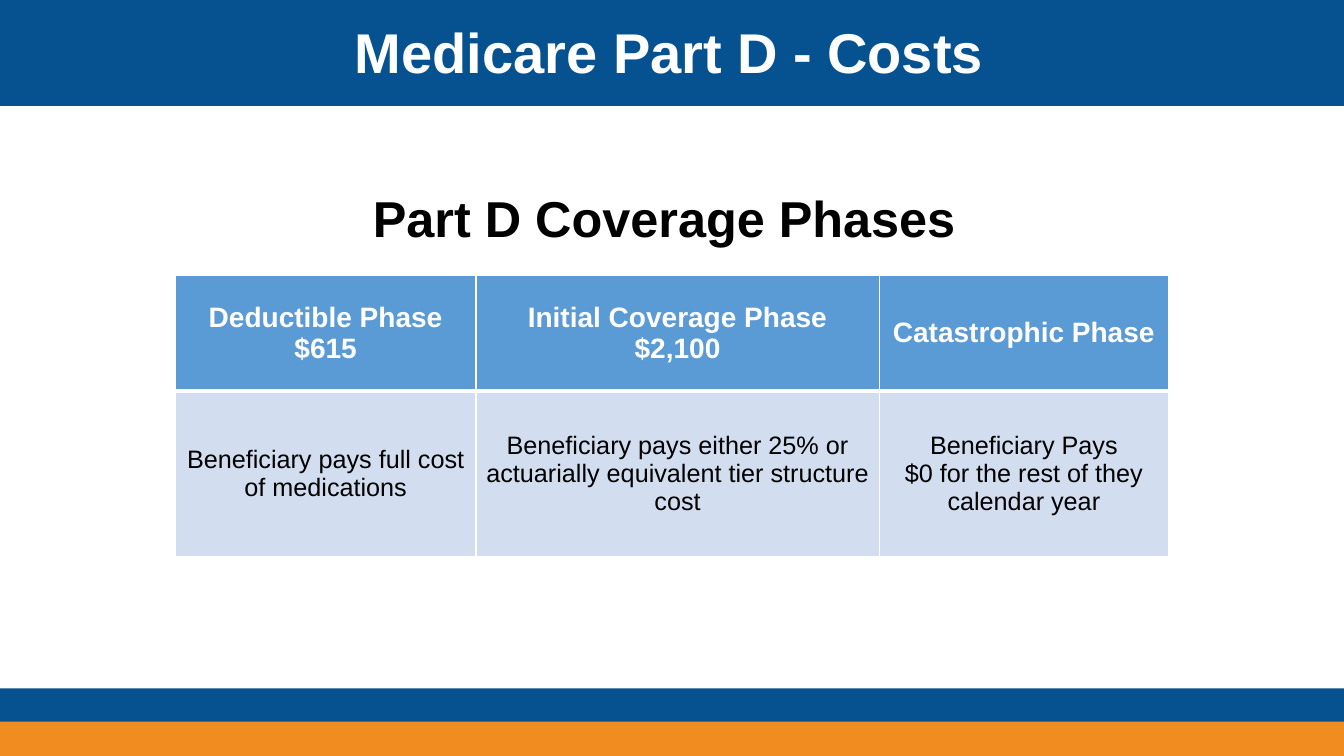
from dataclasses import dataclass

from lxml import etree
from pptx import Presentation
from pptx import util as u
from pptx.dml.color import RGBColor
from pptx.enum import shapes, text
from pptx.oxml import ns

PX = 9144  # EMU per px, 100 px to the inch
WIDTH, HEIGHT = 1333, 750
FONT = "Arial"

WHITE = RGBColor(0xFF, 0xFF, 0xFF)
BLACK = RGBColor(0x00, 0x00, 0x00)
NAVY = RGBColor(0x06, 0x52, 0x90)
ORANGE = RGBColor(0xF1, 0x8C, 0x20)
HEADER_BLUE = RGBColor(0x5B, 0x9B, 0xD5)
PALE_BLUE = RGBColor(0xD2, 0xDE, 0xEF)


@dataclass(frozen=True)
class Band:
    top: int
    height: int
    color: RGBColor


@dataclass(frozen=True)
class Phase:
    width: int
    heading: str
    cost: str


@dataclass(frozen=True)
class RowStyle:
    height: int
    fill: RGBColor
    color: RGBColor
    size: int
    bold: bool
    borders: dict[str, int]  # side -> points


BANDS = [Band(0, 105, NAVY), Band(683, 34, NAVY), Band(716, 34, ORANGE)]

PHASES = [
    Phase(298, "Deductible Phase\n$615",
          "Beneficiary pays full cost of medications"),
    Phase(400, "Initial Coverage Phase\n$2,100",
          "Beneficiary pays either 25% or actuarially equivalent tier structure cost"),
    Phase(287, "Catastrophic Phase",
          "Beneficiary Pays\n$0 for the rest of they calendar year"),
]

HEADING_ROW = RowStyle(115, HEADER_BLUE, WHITE, 20, True, {"L": 1, "R": 1, "T": 1, "B": 3})
COST_ROW = RowStyle(164, PALE_BLUE, BLACK, 18, False, {"L": 1, "R": 1, "T": 3, "B": 1})


def px(length: int) -> u.Emu:
    return u.Emu(length * PX)


def write(frame, words: str, *, size: int, color: RGBColor, bold: bool = True,
          align=text.PP_ALIGN.LEFT) -> None:
    """Fill a text frame, one paragraph per line of words."""
    frame.word_wrap = True
    frame.text = words
    for paragraph in frame.paragraphs:
        paragraph.alignment = align
        font = paragraph.font
        font.name, font.size, font.bold = FONT, u.Pt(size), bold
        font.color.rgb = color


def place(shape, left: int, top: int, width: int, height: int) -> None:
    shape.left, shape.top = px(left), px(top)
    shape.width, shape.height = px(width), px(height)


def draw_band(slide, band: Band) -> None:
    bar = slide.shapes.add_shape(shapes.MSO_SHAPE.RECTANGLE, 0, px(band.top),
                                 px(WIDTH), px(band.height))
    bar.shadow.inherit = False
    bar.fill.solid()
    bar.fill.fore_color.rgb = band.color
    bar.line.fill.background()


def set_borders(cell, borders: dict[str, int]) -> None:
    properties = cell._tc.get_or_add_tcPr()
    for side, points in borders.items():
        line = etree.SubElement(properties, ns.qn(f"a:ln{side}"), w=str(u.Pt(points)))
        fill = etree.SubElement(line, ns.qn("a:solidFill"))
        etree.SubElement(fill, ns.qn("a:srgbClr"), val=str(WHITE))


def style_cell(cell, words: str, style: RowStyle) -> None:
    set_borders(cell, style.borders)
    cell.fill.solid()
    cell.fill.fore_color.rgb = style.fill
    cell.vertical_anchor = text.MSO_ANCHOR.MIDDLE
    write(cell.text_frame, words, size=style.size, color=style.color,
          bold=style.bold, align=text.PP_ALIGN.CENTER)


def draw_phases(slide, left: int, top: int) -> None:
    styles = [HEADING_ROW, COST_ROW]
    width = sum(phase.width for phase in PHASES)
    height = sum(style.height for style in styles)
    phases = slide.shapes.add_table(len(styles), len(PHASES), px(left), px(top),
                                    px(width), px(height)).table
    for row, style in zip(phases.rows, styles):
        row.height = px(style.height)
    for index, phase in enumerate(PHASES):
        phases.columns[index].width = px(phase.width)
        style_cell(phases.cell(0, index), phase.heading, HEADING_ROW)
        style_cell(phases.cell(1, index), phase.cost, COST_ROW)


def main() -> None:
    deck = Presentation()
    deck.slide_width, deck.slide_height = px(WIDTH), px(HEIGHT)
    slide = deck.slides.add_slide(deck.slide_layouts[5])

    # Header and footer bands
    for band in BANDS:
        draw_band(slide, band)

    # Title, brought in front of the header band
    title = slide.shapes.title
    place(title, 342, 12, 650, 77)
    title.text_frame.vertical_anchor = text.MSO_ANCHOR.TOP
    title.text_frame.auto_size = text.MSO_AUTO_SIZE.NONE
    write(title.text_frame, "Medicare Part D - Costs", size=40, color=WHITE)
    title.element.getparent().append(title.element)

    # Table heading
    heading = slide.shapes.add_textbox(px(360), px(181), px(613), px(71))
    write(heading.text_frame, "Part D Coverage Phases", size=36, color=BLACK)

    # Coverage phases
    draw_phases(slide, 174, 273)

    deck.save("out.pptx")


if __name__ == "__main__":
    main()
